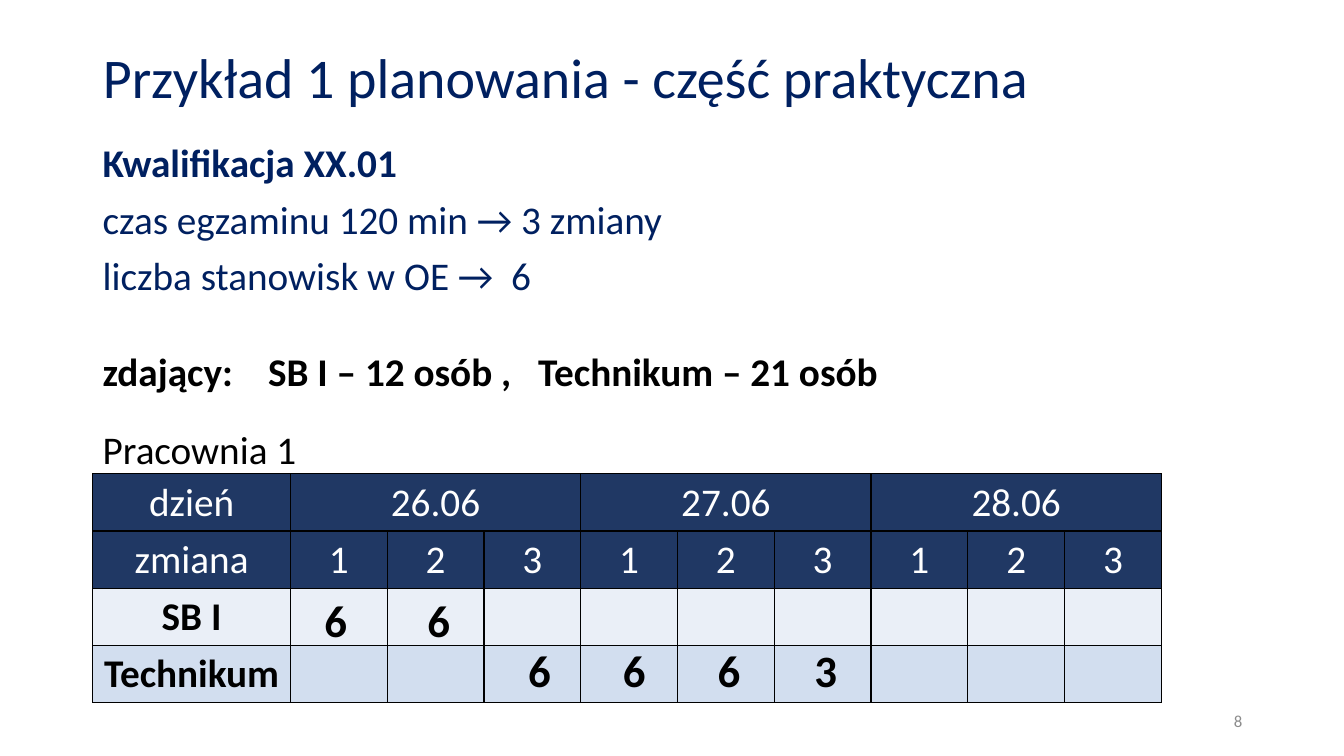
from lxml import etree
from pptx import Presentation
from pptx.dml.color import RGBColor
from pptx.enum.text import MSO_ANCHOR, MSO_AUTO_SIZE, PP_ALIGN
from pptx.oxml.ns import qn
from pptx.util import Emu, Pt

LEFT, CENTER, RIGHT = PP_ALIGN.LEFT, PP_ALIGN.CENTER, PP_ALIGN.RIGHT
TOP, MIDDLE = MSO_ANCHOR.TOP, MSO_ANCHOR.MIDDLE
NO_FIT = MSO_AUTO_SIZE.NONE
PX = 9144  # 100 px to the inch
NAVY, BLACK, WHITE, GREY = "002060", "000000", "FFFFFF", "8C8C8C"
HEADER, SCHOOL_FILLS = "203864", ["EAEFF7", "D2DEEF"]


def write(p, text, size, color, bold=False, **layout):
    r = p.add_run()
    r.text = text
    for name, value in {"name": "Calibri", "size": Pt(size), "bold": bold}.items():
        setattr(r.font, name, value)
    r.font.color.rgb = RGBColor.from_string(color)
    for name, value in layout.items():
        setattr(p, name, value)


def add_box(x, y, w, h, anchor=TOP):
    sp = slide.shapes.add_textbox(*[Emu(v * PX) for v in (x, y, w, h)])
    tf = sp.text_frame
    for name, value in {"word_wrap": True, "vertical_anchor": anchor}.items():
        setattr(tf, name, value)
    return tf


prs = Presentation()
prs.slide_width, prs.slide_height = Emu(1333 * PX), Emu(750 * PX)
slide = prs.slides.add_slide(prs.slide_layouts[5])

# Title
title = slide.shapes.title
for name, value in {"left": 92, "top": 40, "width": 1150, "height": 79}.items():
    setattr(title, name, Emu(value * PX))
tf = title.text_frame
for name, value in {"auto_size": NO_FIT, "word_wrap": True, "vertical_anchor": MIDDLE}.items():
    setattr(tf, name, value)
write(tf.paragraphs[0], "Przykład 1 planowania - część praktyczna", 40, NAVY,
      alignment=LEFT, line_spacing=0.9)

# Qualification details
tf = add_box(92, 138, 1150, 183)
details = ["Kwalifikacja XX.01", "czas egzaminu 120 min → 3 zmiany",
           "liczba stanowisk w OE →  6"]
for i, line in enumerate(details):
    p = tf.add_paragraph() if i else tf.paragraphs[0]
    write(p, line, 28, NAVY, bold=i == 0, line_spacing=0.9, space_before=Pt(10))

# Candidates, set on tab stops
p = add_box(92, 340, 1150, 57).paragraphs[0]
write(p, "zdający:\tSB I – 12 osób ,\tTechnikum – 21 osób", 28, BLACK, bold=True)
tabs = etree.SubElement(p._p.get_or_add_pPr(), qn("a:tabLst"))
for stop in (164, 432):
    etree.SubElement(tabs, qn("a:tab"), pos=str(stop * PX), algn="l")

# Schedule table
write(add_box(92, 417, 378, 57).paragraphs[0], "Pracownia 1", 28, BLACK)
days, shifts = ["26.06", "27.06", "28.06"], ["1", "2", "3"]
day_row = ["dzień"]
for day in days:
    day_row += [day, "", ""]
rows = [day_row, ["zmiana"] + shifts * len(days), ["SB I"] + [""] * 9, ["Technikum"] + [""] * 9]
fills = [HEADER, HEADER] + SCHOOL_FILLS
table = slide.shapes.add_table(4, 10, *[Emu(v * PX) for v in (92, 470, 1060, 232)]).table
for i, col in enumerate(table.columns):
    col.width = Emu((96 if i else 196) * PX)
for r, row in enumerate(rows):
    table.rows[r].height = Emu(48 * PX)
    for c, text in enumerate(row):
        cell = table.cell(r, c)
        if text:
            write(cell.text_frame.paragraphs[0], text, 28, WHITE if r < 2 else BLACK,
                  bold=r > 1, alignment=CENTER)
        tc_pr = cell._tc.get_or_add_tcPr()
        for side in ("lnL", "lnR", "lnT", "lnB"):
            ln = etree.SubElement(tc_pr, qn("a:" + side), w=str(Pt(1)))
            fill = etree.SubElement(ln, qn("a:solidFill"))
            etree.SubElement(fill, qn("a:srgbClr"), val=BLACK)
        cell.fill.solid()
        cell.fill.fore_color.rgb = RGBColor.from_string(fills[r])
for c in (1, 4, 7):
    table.cell(0, c).merge(table.cell(0, c + 2))

# Candidates per shift, laid over the table
counts = [(312, 583, "6"), (414, 583, "6"), (514, 633, "6"),
          (608, 633, "6"), (702, 633, "6"), (798, 633, "3")]
for x, y, count in counts:
    write(add_box(x, y, 46, 64).paragraphs[0], count, 32, BLACK, bold=True)

# Slide number
write(add_box(942, 695, 300, 40, MIDDLE).paragraphs[0], "8", 12, GREY, alignment=RIGHT)

prs.save("out.pptx")
